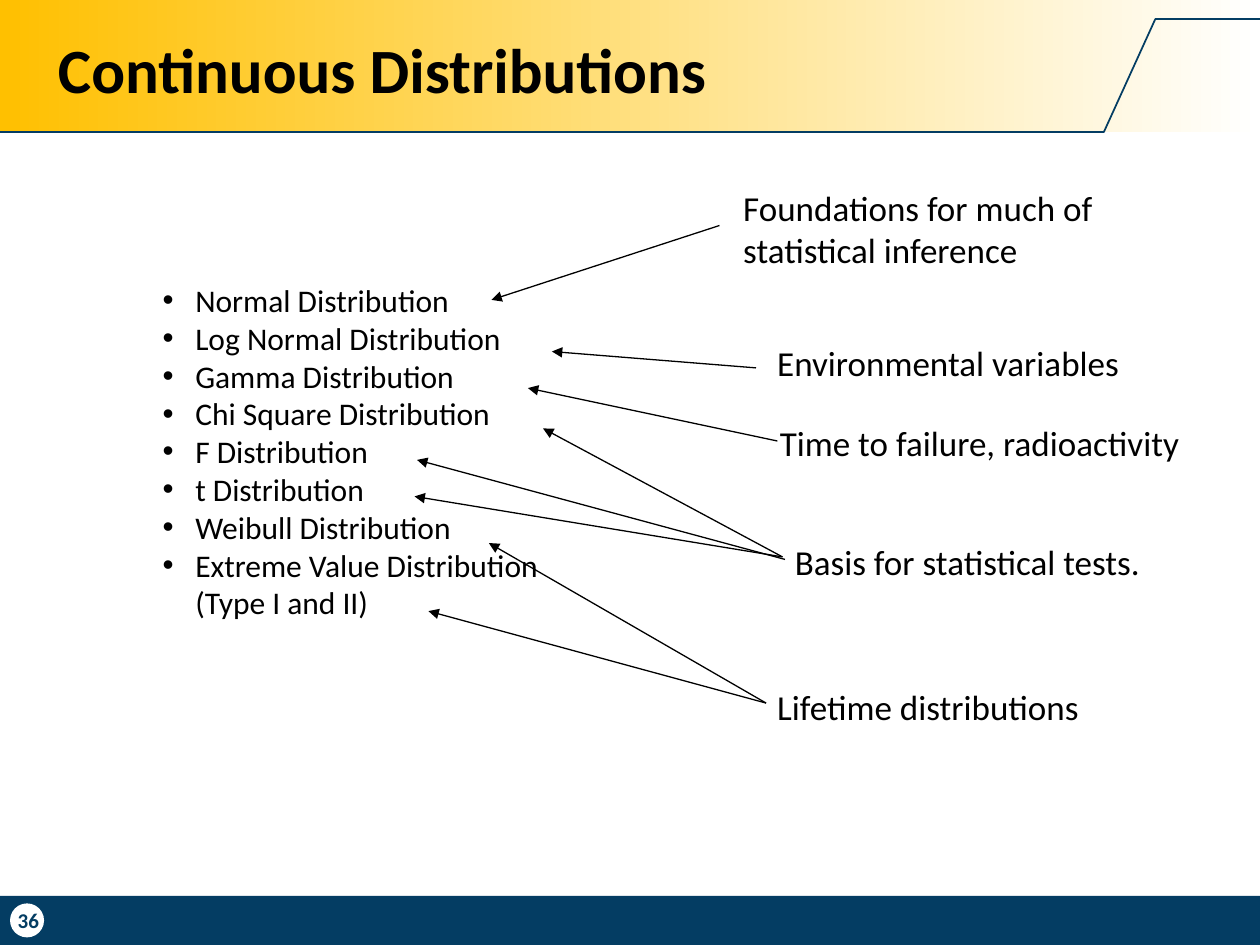
import pptx
import pptx.dml.color
import pptx.enum.shapes
import pptx.enum.text
import pptx.oxml.ns
import pptx.util
from lxml import etree
from pptx.util import Inches

COLORS = {"navy": "043D63", "gold": "FFC000", "white": "FFFFFF", "black": "000000"}
FONT = "Calibri"
SHAPES = pptx.enum.shapes.MSO_SHAPE
DISTRIBUTIONS = [
    "Normal Distribution",
    "Log Normal Distribution",
    "Gamma Distribution",
    "Chi Square Distribution",
    "F Distribution",
    "t Distribution",
    "Weibull Distribution",
    "Extreme Value Distribution (Type I and II)",
]
USES = [
    ("Foundations for much of statistical inference", (5.8, 1.43, 3.59, 0.77), True,
     [((5.71, 1.79), (3.9, 2.38))]),
    ("Environmental variables", (6.07, 2.66, 2.94, 0.44), False,
     [((6, 2.92), (4.38, 2.79))]),
    ("Time to failure, radioactivity", (6.09, 3.3, 3.41, 0.44), False,
     [((6.17, 3.5), (4.19, 3.08))]),
    ("Basis for statistical tests.", (6.21, 4.24, 2.98, 0.44), False,
     [((6.21, 4.42), (4.31, 3.4)), ((6.23, 4.44), (3.31, 3.65)),
      ((6.21, 4.42), (3.29, 3.94))]),
    ("Lifetime distributions", (6.07, 5.39, 2.62, 0.44), False,
     [((6.08, 5.58), (3.88, 4.31)), ((6.08, 5.58), (3.4, 4.85))]),
]


def rgb(name):
    """Return the named colour."""
    return pptx.dml.color.RGBColor.from_string(COLORS[name])


def add_tag(parent, tag, **attributes):
    """Append a drawing element to its parent."""
    return etree.SubElement(parent, pptx.oxml.ns.qn(tag), attributes)


def style(paragraph, size, color="black", bold=False):
    """Set the font of a whole paragraph."""
    font = paragraph.font
    font.name, font.size, font.bold = FONT, pptx.util.Pt(size), bold
    font.color.rgb = rgb(color)


def place(shape, left, top, width, height):
    """Move and size a placeholder."""
    shape.left, shape.top = Inches(left), Inches(top)
    shape.width, shape.height = Inches(width), Inches(height)


def add_block(page, kind, at, color):
    """Add a plain filled shape without an outline."""
    shape = page.shapes.add_shape(kind, *map(Inches, at))
    shape.shadow.inherit = False
    shape.fill.solid()
    shape.fill.fore_color.rgb = rgb(color)
    shape.line.fill.background()
    return shape


def add_line(page, start, end, color, width, arrow=False):
    """Add a straight line, with an arrowhead at its end if wanted."""
    line = page.shapes.add_connector(
        pptx.enum.shapes.MSO_CONNECTOR.STRAIGHT, *map(Inches, start + end))
    line.line.color.rgb = rgb(color)
    line.line.width = pptx.util.Pt(width)
    if arrow:
        add_tag(line.line._get_or_add_ln(), "a:tailEnd", type="triangle")
    add_tag(line._element.spPr, "a:effectLst")


def add_text(page, text, at, size, color="black", bold=False, wrap=True):
    """Add a text box with one paragraph and return it."""
    box = page.shapes.add_textbox(*map(Inches, at))
    box.text_frame.word_wrap = wrap
    box.text_frame.text = text
    style(box.text_frame.paragraphs[0], size, color, bold)
    return box


def add_frame(page):
    """Add the header band with its stepped rule and the footer bar."""
    band = add_block(page, SHAPES.RECTANGLE, (0, 0, 10, 1.05), "gold")
    band.fill.gradient()
    band.fill.gradient_angle = 0
    for stop, color, position in zip(band.fill.gradient_stops, ("gold", "white"), (0, 1)):
        stop.color.rgb = rgb(color)
        stop.position = position
    add_block(page, SHAPES.RECTANGLE, (0, 7.11, 10, 0.39), "navy")
    corners = [(0, 1.05), (8.76, 1.05), (9.17, 0.15), (10, 0.15)]
    for start, end in zip(corners, corners[1:]):
        add_line(page, start, end, "navy", 1)


def add_page_number(page, number):
    """Add the page number on its white disc."""
    add_block(page, SHAPES.OVAL, (0.08, 7.17, 0.27, 0.27), "white")
    box = add_text(page, number, (-0.01, 7.09, 0.47, 0.43), 12, "navy", True)
    box.text_frame.vertical_anchor = pptx.enum.text.MSO_ANCHOR.MIDDLE
    box.text_frame.paragraphs[0].alignment = pptx.enum.text.PP_ALIGN.CENTER


def fill_title(title, text):
    """Write the title and bring it in front of the header band."""
    place(title, 0.36, 0.11, 8.96, 0.94)
    title.text_frame.text = text
    title.text_frame.vertical_anchor = pptx.enum.text.MSO_ANCHOR.MIDDLE
    para = title.text_frame.paragraphs[0]
    para.alignment = pptx.enum.text.PP_ALIGN.LEFT
    para.line_spacing = 0.9
    style(para, 36, bold=True)
    title.element.getparent().append(title.element)


def fill_list(body, items):
    """Write the bulleted list."""
    place(body, 0.69, 2.18, 4.15, 2.87)
    body.text_frame.text = "\n".join(items)
    for para in body.text_frame.paragraphs:
        para.level = 1
        para.space_before = pptx.util.Pt(0)
        properties = para._p.get_or_add_pPr()
        properties.set("marL", str(Inches(0.76)))
        properties.set("indent", str(Inches(-0.26)))
        add_tag(properties, "a:buFont", typeface="Arial")
        add_tag(properties, "a:buChar", char="•")
        style(para, 18)


def main():
    """Build the slide and save it."""
    deck = pptx.Presentation()
    deck.slide_width, deck.slide_height = Inches(10), Inches(7.5)
    page = deck.slides.add_slide(deck.slide_layouts[1])
    add_frame(page)
    fill_title(page.shapes.title, "Continuous Distributions")
    fill_list(page.placeholders[1], DISTRIBUTIONS)
    for text, at, wrap, arrows in USES:
        add_text(page, text, at, 20, wrap=wrap)
        for start, end in arrows:
            add_line(page, start, end, "black", 0.75, arrow=True)
    add_page_number(page, "36")
    deck.save("out.pptx")


if __name__ == "__main__":
    main()
